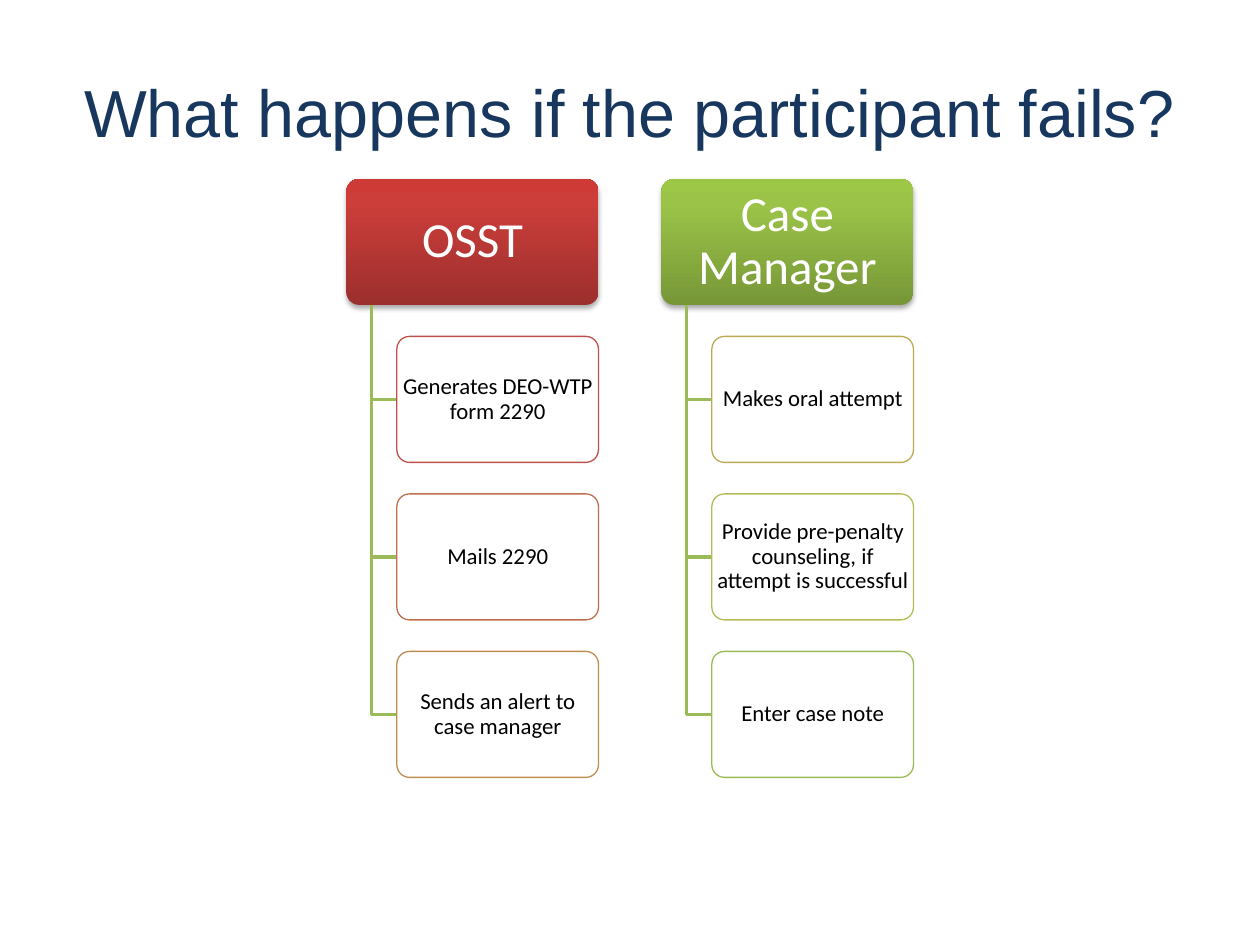
"""Build a slide that shows who does what when a participant fails."""
from lxml import etree
from pptx import Presentation
from pptx import util as u
from pptx.dml.color import RGBColor
from pptx.enum import shapes, text
from pptx.oxml import ns

NAVY = RGBColor(0x17, 0x37, 0x5E)
WHITE = RGBColor(0xFF, 0xFF, 0xFF)
BLACK = RGBColor(0, 0, 0)
GREEN = RGBColor(0x9B, 0xBB, 0x59)

TITLE = "What happens if the participant fails?"
COLUMNS = [
    ("OSST", ("9C2F2D", "CB3E3A", "CE3B37"), [
        ("Generates DEO-WTP form 2290", RGBColor(0xC0, 0x50, 0x4D)),
        ("Mails 2290", RGBColor(0xBF, 0x6F, 0x4F)),
        ("Sends an alert to case manager", RGBColor(0xBE, 0x8D, 0x52)),
    ]),
    ("Case Manager", ("779737", "9BC348", "9DC746"), [
        ("Makes oral attempt", RGBColor(0xBD, 0xA9, 0x54)),
        ("Provide pre-penalty counseling, if attempt is successful",
         RGBColor(0xB5, 0xBC, 0x57)),
        ("Enter case note", GREEN),
    ]),
]
STOPS = (0, 80, 100)

LEFT, TOP = 2.75, 1.42
HEAD_WIDTH, STEP_WIDTH, HEIGHT = 2, 1.6, 1
COLUMN_PITCH, ROW_PITCH = 2.5, 1.25
TRUNK_OFFSET, STEP_OFFSET = 0.2, 0.4


def add_element(parent, tag, **attributes):
    return etree.SubElement(parent, ns.qn(tag), attributes)


def write(frame, words, font_name, size, color):
    frame.word_wrap = True
    frame.vertical_anchor = text.MSO_ANCHOR.MIDDLE
    para = frame.paragraphs[0]
    para.alignment = text.PP_ALIGN.CENTER
    span = para.add_run()
    span.text = words
    span.font.name, span.font.size = font_name, u.Pt(size)
    span.font.color.rgb = color
    return para


def add_box(page, left, top, width, words, size, color, inset):
    box = page.shapes.add_shape(
        shapes.MSO_SHAPE.ROUNDED_RECTANGLE,
        u.Inches(left), u.Inches(top), u.Inches(width), u.Inches(HEIGHT))
    box.adjustments[0] = 0.1
    box.shadow.inherit = False
    frame = box.text_frame
    frame.margin_left = frame.margin_right = u.Inches(inset)
    frame.margin_top = frame.margin_bottom = 0
    write(frame, words, "Calibri", size, color).line_spacing = 0.9
    return box


def add_head(page, left, words, colors):
    box = add_box(page, left, TOP, HEAD_WIDTH, words, 28, WHITE, 0.03)
    box.line.fill.background()
    box.fill.gradient()
    box.fill.gradient_angle = 90
    properties = box.element.spPr
    stops = properties.find(".//" + ns.qn("a:gsLst"))
    for stop in list(stops):
        stops.remove(stop)
    for position, color in zip(STOPS, colors):
        stop = add_element(stops, "a:gs", pos=str(position * 1000))
        add_element(stop, "a:srgbClr", val=color)
    shadow = add_element(
        properties.find(ns.qn("a:effectLst")), "a:outerShdw",
        blurRad=str(u.Pt(3.1)), dist=str(u.Pt(1.8)), dir="5400000", rotWithShape="0")
    shade = add_element(shadow, "a:srgbClr", val="000000")
    add_element(shade, "a:alpha", val="35000")


def add_branch(page, left, row_top):
    trunk, elbow = left + TRUNK_OFFSET, row_top + HEIGHT / 2
    builder = page.shapes.build_freeform(
        u.Inches(trunk), u.Inches(TOP + HEIGHT))
    corners = [(trunk, elbow), (left + STEP_OFFSET, elbow)]
    builder.add_line_segments(
        [(u.Inches(x), u.Inches(y)) for x, y in corners], close=False)
    branch = builder.convert_to_shape()
    branch.shadow.inherit = False
    branch.fill.background()
    branch.line.color.rgb = GREEN
    branch.line.width = u.Pt(2)


def add_step(page, left, top, words, color):
    box = add_box(page, left, top, STEP_WIDTH, words, 13, BLACK, 0)
    box.fill.solid()
    box.fill.fore_color.rgb = WHITE
    fill_color = box.element.spPr.find(ns.qn("a:solidFill"))[0]
    add_element(fill_color, "a:alpha", val="90000")
    box.line.color.rgb = color
    box.line.width = u.Pt(0.75)


def main():
    deck = Presentation()
    deck.slide_width, deck.slide_height = u.Inches(10), u.Inches(7.5)
    page = deck.slides.add_slide(deck.slide_layouts[5])
    title = page.shapes.title
    title.left, title.top = u.Inches(0.5), u.Inches(0.42)
    title.width, title.height = u.Inches(9), u.Inches(0.92)
    write(title.text_frame, TITLE, "Arial", 38, NAVY)
    for column, (head, colors, steps) in enumerate(COLUMNS):
        left = LEFT + column * COLUMN_PITCH
        add_head(page, left, head, colors)
        for row, (words, color) in enumerate(steps, start=1):
            top = TOP + row * ROW_PITCH
            add_branch(page, left, top)
            add_step(page, left + STEP_OFFSET, top, words, color)
    deck.save("out.pptx")


if __name__ == "__main__":
    main()
